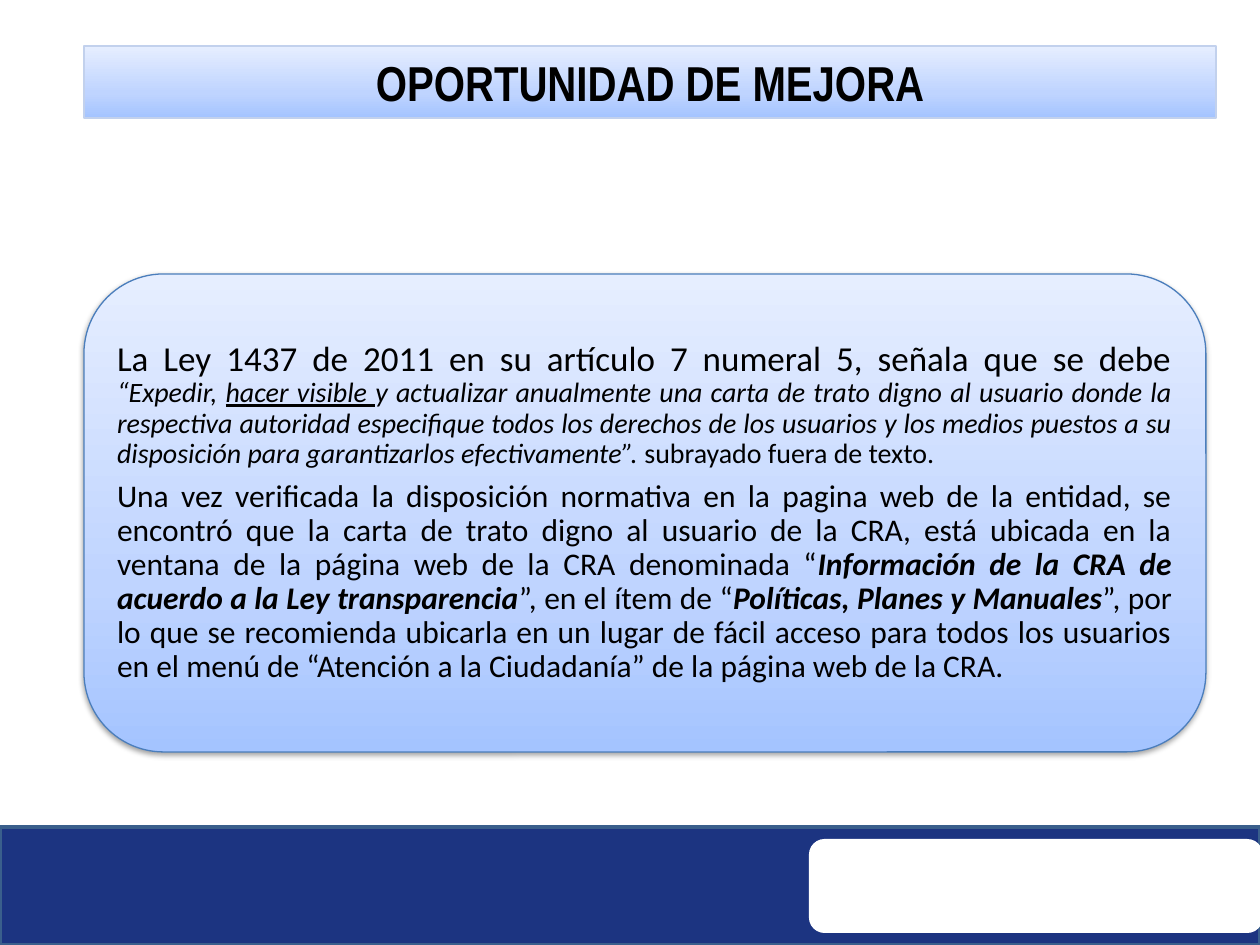
from lxml import etree
from pptx import Presentation
from pptx.dml.color import RGBColor
from pptx.enum.shapes import MSO_SHAPE
from pptx.enum.text import MSO_ANCHOR, MSO_AUTO_SIZE, PP_ALIGN
from pptx.oxml import parse_xml
from pptx.oxml.ns import nsdecls, qn
from pptx.util import Pt

PX = 914400 / 126
GRADIENT = [(0, "A4C4FF"), (35, "BFD4FF"), (100, "E6EEFF")]


def color(value):
    return RGBColor.from_string(value)


def add_run(paragraph, text, size, font="Calibri", bold=False, italic=False, underline=False):
    run = paragraph.add_run()
    run.text = text
    run.font.name = font
    run.font.size = Pt(size)
    run.font.bold = bold
    run.font.italic = italic
    run.font.underline = underline
    run.font.color.rgb = color("000000")


presentation = Presentation()
presentation.slide_width = round(1260 * PX)
presentation.slide_height = round(945 * PX)
slide = presentation.slides.add_slide(presentation.slide_layouts[6])

# Footer band, its white plate, title bar and panel: one fill (None = gradient) each
shapes = []
for kind, box, fill, line, width in [
    (MSO_SHAPE.RECTANGLE, (0, 827, 1260, 118), "1C3481", "3A5F8C", 2),
    (MSO_SHAPE.ROUNDED_RECTANGLE, (809, 839, 454, 94), "FFFFFF", None, 0),
    (MSO_SHAPE.RECTANGLE, (84, 46, 1132, 72), None, "C2D1ED", 0.75),
    (MSO_SHAPE.ROUNDED_RECTANGLE, (84, 274, 1122, 478), None, "4B7EBC", 0.75),
]:
    shape = slide.shapes.add_shape(kind, *[round(length * PX) for length in box])
    shape.shadow.inherit = False
    if fill:
        shape.fill.solid()
        shape.fill.fore_color.rgb = color(fill)
    else:
        shape.fill.gradient()
        shape.fill.gradient_angle = 90
        stops = shape._element.spPr.find(".//" + qn("a:gsLst"))
        for stop in list(stops):
            stops.remove(stop)
        for position, value in GRADIENT:
            stop = etree.SubElement(stops, qn("a:gs"), pos=str(position * 1000))
            etree.SubElement(stop, qn("a:srgbClr"), val=value)
    if line:
        shape.line.color.rgb = color(line)
        shape.line.width = Pt(width)
    else:
        shape.line.fill.background()
    shapes.append(shape)
footer, plate, title, panel = shapes

# Soft shadow below the panel
panel._element.spPr.find(qn("a:effectLst")).append(parse_xml(
    f'<a:outerShdw {nsdecls("a")} blurRad="{Pt(3.1)}" dist="{Pt(1.6)}" dir="5400000" rotWithShape="0">'
    '<a:srgbClr val="000000"><a:alpha val="38000"/></a:srgbClr></a:outerShdw>'))

# Title text
title.text_frame.word_wrap = True
title.text_frame.auto_size = MSO_AUTO_SIZE.SHAPE_TO_FIT_TEXT
paragraph = title.text_frame.paragraphs[0]
paragraph.alignment = PP_ALIGN.CENTER
add_run(paragraph, "OPORTUNIDAD DE MEJORA", 28, font="Arial Narrow", bold=True)

# Panel text
strong = {"bold": True, "italic": True}
paragraphs = [
    [
        ("La Ley 1437 de 2011 en su artículo 7 numeral 5, señala que se debe ", 20, {}),
        ("“Expedir, ", 16, {"italic": True}),
        ("hacer visible ", 16, {"italic": True, "underline": True}),
        ("y actualizar anualmente una carta de trato digno al usuario donde la respectiva "
         "autoridad especifique todos los derechos de los usuarios y los medios puestos a su "
         "disposición para garantizarlos efectivamente”. ", 16, {"italic": True}),
        ("subrayado fuera de texto.", 16, {}),
    ],
    [
        ("Una vez verificada la disposición normativa en la pagina web de la entidad, se "
         "encontró que la carta de trato digno al usuario de la CRA, está ubicada en la "
         "ventana de la página web de la CRA denominada “", 18, {}),
        ("Información de la CRA de acuerdo a la Ley transparencia", 18, strong),
        ("”, en el ítem de “", 18, {}),
        ("Políticas, Planes y Manuales", 18, strong),
        ("”, por lo que se recomienda ubicarla en un lugar de fácil acceso para todos los "
         "usuarios en el menú de “Atención a la Ciudadanía” de la página web de la CRA.", 18, {}),
    ],
]
text_box = slide.shapes.add_textbox(*[round(length * PX) for length in (107, 297, 1075, 431)])
frame = text_box.text_frame
frame.word_wrap = True
frame.vertical_anchor = MSO_ANCHOR.MIDDLE
frame.margin_left = frame.margin_right = round(10 * PX)
frame.margin_top = frame.margin_bottom = round(10 * PX)
for index, runs in enumerate(paragraphs):
    paragraph = frame.add_paragraph() if index else frame.paragraphs[0]
    paragraph.alignment = PP_ALIGN.JUSTIFY
    paragraph.line_spacing = 0.9
    paragraph.space_after = Pt(6)
    for text, size, style in runs:
        add_run(paragraph, text, size, **style)

presentation.save("out.pptx")
